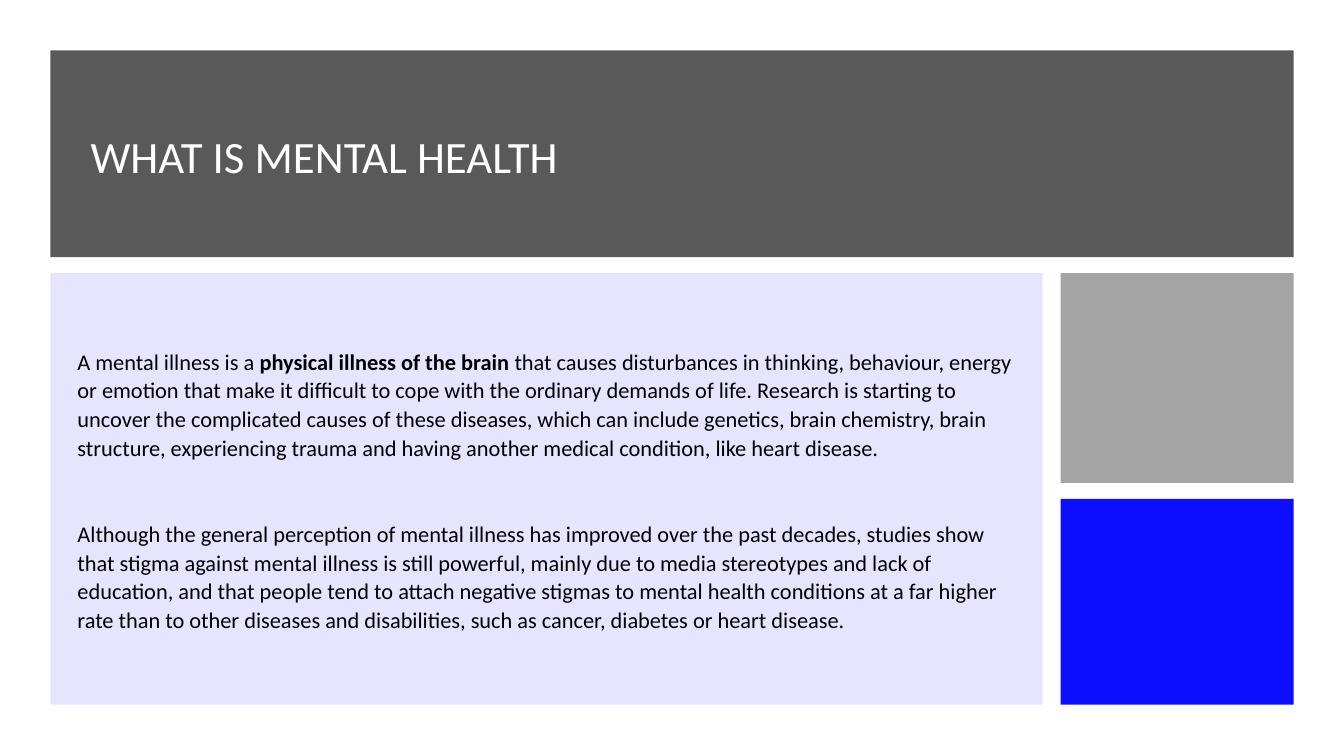
import pptx
import pptx.dml.color
import pptx.enum.shapes
import pptx.enum.text
import pptx.oxml
import pptx.oxml.ns
import pptx.util

Inches = pptx.util.Inches
Pt = pptx.util.Pt

COLORS = {
    "banner": "595959",
    "panel": "8080FF",
    "upper_tile": "A5A5A5",
    "lower_tile": "0000FF",
    "title": "FFFFFF",
    "body": "000000",
}
MARGIN = 0.5
GAP = 0.16
COLUMN_GAP = 0.18
TILE_WIDTH = 2.31

TITLE = "WHAT IS MENTAL HEALTH"
BODY = [
    [
        ("A mental illness is a ", False),
        ("physical illness of the brain", True),
        (
            " that causes disturbances in thinking, behaviour, energy or emotion that "
            "make it difficult to cope with the ordinary demands of life. Research is "
            "starting to uncover the complicated causes of these diseases, which can "
            "include genetics, brain chemistry, brain structure, experiencing trauma "
            "and having another medical condition, like heart disease.",
            False,
        ),
    ],
    [
        (
            "Although the general perception of mental illness has improved over the "
            "past decades, studies show that stigma against mental illness is still "
            "powerful, mainly due to media stereotypes and lack of education, and that "
            "people tend to attach negative stigmas to mental health conditions at a "
            "far higher rate than to other diseases and disabilities, such as cancer, "
            "diabetes or heart disease.",
            False,
        ),
    ],
]


def apply_format(target, values):
    for name, value in values.items():
        setattr(target, name, value)


def add_block(page, box, color, opacity=100):
    block = page.shapes.add_shape(
        pptx.enum.shapes.MSO_SHAPE.RECTANGLE, *map(Inches, box)
    )
    block.shadow.inherit = False
    block.line.fill.background()
    block.fill.solid()
    block.fill.fore_color.rgb = pptx.dml.color.RGBColor.from_string(COLORS[color])
    if opacity < 100:
        fill_color = block.fill._xPr.find(".//" + pptx.oxml.ns.qn("a:srgbClr"))
        alpha = pptx.oxml.parse_xml(
            f'<a:alpha {pptx.oxml.ns.nsdecls("a")} val="{opacity * 1000}"/>'
        )
        fill_color.append(alpha)


def add_text(page, box, paragraphs, color, size, line_spacing, space_before=0):
    frame = page.shapes.add_textbox(*map(Inches, box)).text_frame
    apply_format(frame, {
        "word_wrap": True,
        "vertical_anchor": pptx.enum.text.MSO_ANCHOR.MIDDLE,
    })
    for index, spans in enumerate(paragraphs):
        para = frame.add_paragraph() if index else frame.paragraphs[0]
        apply_format(para, {
            "line_spacing": line_spacing,
            "space_before": Pt(space_before if index else 0),
        })
        for text, bold in spans:
            span = para.add_run()
            span.text = text
            apply_format(span.font, {"name": "Calibri", "size": Pt(size), "bold": bold})
            span.font.color.rgb = pptx.dml.color.RGBColor.from_string(COLORS[color])


def add_banner(page, box):
    left, top, width, height = box
    add_block(page, box, "banner")
    text_box = (left + 0.3, top + 0.3, width - 0.67, height - 0.49)
    add_text(page, text_box, [[(TITLE, False)]], "title", 32, 0.9)


def add_panel(page, box):
    left, top, width, height = box
    add_block(page, box, "panel", 20)
    text_box = (left + 0.17, top + 0.65, width - 0.33, height - 1.29)
    add_text(page, text_box, BODY, "body", 16, 1.07, 41)


def add_tiles(page, box):
    left, top, width, height = box
    upper_height = 2.08
    lower_top = top + upper_height + GAP
    lower_height = top + height - lower_top
    add_block(page, (left, top, width, upper_height), "upper_tile")
    add_block(page, (left, lower_top, width, lower_height), "lower_tile", 95)


def main():
    deck = pptx.Presentation()
    deck.slide_width = Inches(13.33)
    deck.slide_height = Inches(7.5)
    page = deck.slides.add_slide(deck.slide_layouts[6])

    width, banner_height = 12.33, 2.05
    content_top = MARGIN + banner_height + GAP
    content_height = 4.28
    panel_width = width - TILE_WIDTH - COLUMN_GAP
    tiles_left = MARGIN + panel_width + COLUMN_GAP

    add_banner(page, (MARGIN, MARGIN, width, banner_height))
    add_panel(page, (MARGIN, content_top, panel_width, content_height))
    add_tiles(page, (tiles_left, content_top, TILE_WIDTH, content_height))
    deck.save("out.pptx")


if __name__ == "__main__":
    main()
